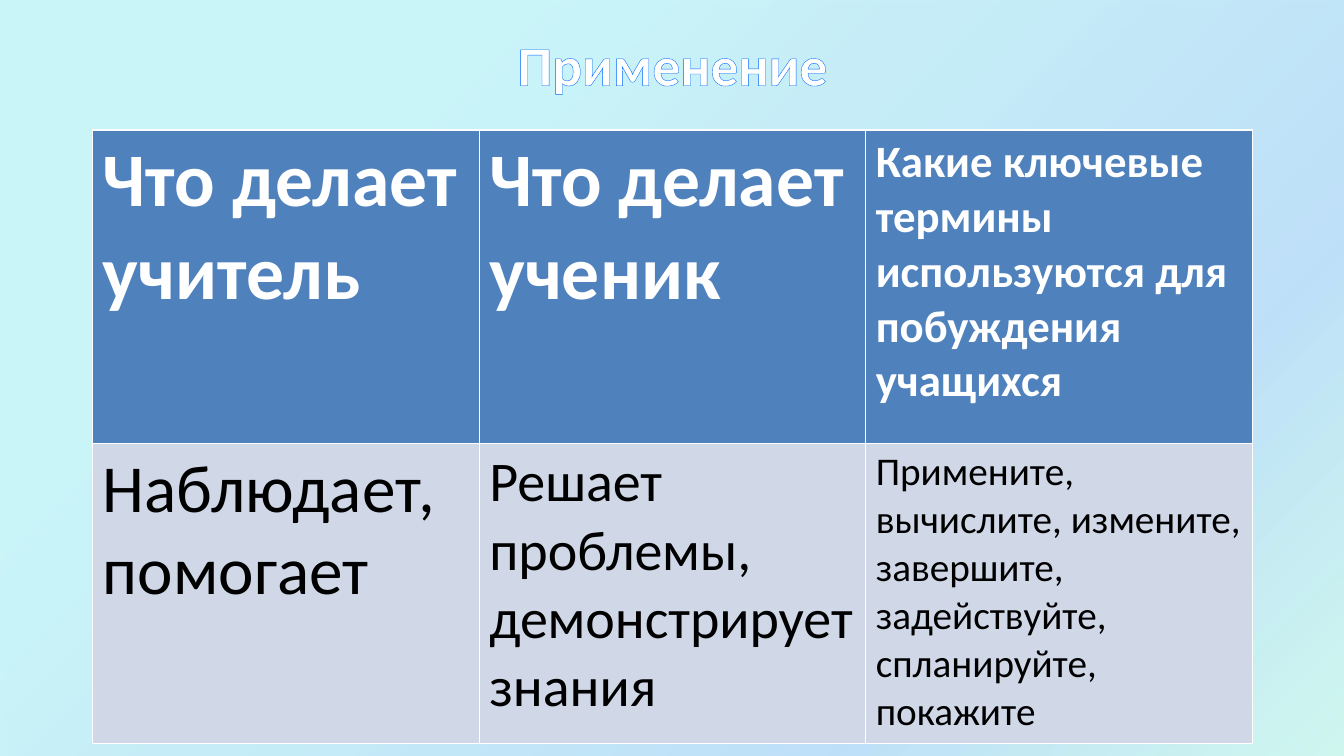
"""Builds the slide «Применение»: a title over a table of teacher, pupil and key terms."""
from dataclasses import dataclass

from lxml import etree
from pptx import Presentation
from pptx.dml.color import RGBColor
from pptx.enum.shapes import MSO_SHAPE
from pptx.enum.text import MSO_ANCHOR, MSO_AUTO_SIZE, PP_ALIGN
from pptx.oxml.ns import qn
from pptx.util import Inches, Pt

RECTANGLE = MSO_SHAPE.RECTANGLE
TOP = MSO_ANCHOR.TOP
CENTER = PP_ALIGN.CENTER
NO_AUTOFIT = MSO_AUTO_SIZE.NONE
TITLE_ONLY = 5

HEADER = ["Что делает учитель", "Что делает ученик",
          "Какие ключевые термины используются для побуждения учащихся"]
BODY = ["Наблюдает, помогает", "Решает проблемы, демонстрирует знания",
        "Примените, вычислите, измените, завершите, задействуйте, спланируйте, покажите"]


@dataclass(frozen=True)
class Theme:
    """Colours, font and type sizes of the slide."""
    font: str = "Calibri"
    white: str = "FFFFFF"
    black: str = "000000"
    header_fill: str = "4F81BD"
    body_fill: str = "D0D8E8"
    title_outline: str = "0066FF"
    title_outline_width: float = 1.45
    title_size: float = 39.6
    header_sizes: tuple = (54, 54, 32)
    body_sizes: tuple = (48, 40, 28)
    gradient: tuple = ((25, "21D6E0", 23), (75, "0087E6", 25),
                       (100, "03D4A8", 18), (100, "005CBF", 26))


class SlideBuilder:
    """Holds the theme and the current slide."""

    def __init__(self, presentation, theme):
        """Add a title-only slide."""
        self.theme = theme
        self.slide = presentation.slides.add_slide(presentation.slide_layouts[TITLE_ONLY])

    def style(self, paragraph, size, color, bold):
        """Set the font of a paragraph."""
        font = paragraph.font
        font.name, font.size, font.bold = self.theme.font, Pt(size), bold
        font.color.rgb = RGBColor.from_string(color)

    def backdrop(self, width, height):
        """Draw the translucent gradient behind everything."""
        shape = self.slide.shapes.add_shape(RECTANGLE, 0, 0, Inches(width), Inches(height))
        shape.shadow.inherit = False
        shape.line.fill.background()
        shape.fill.gradient()
        shape.fill.gradient_angle = 315
        stops = shape._element.spPr.find(".//" + qn("a:gsLst"))
        for stop in list(stops):
            stops.remove(stop)
        for position, color, opacity in self.theme.gradient:
            stop = etree.SubElement(stops, qn("a:gs"), pos=str(position * 1000))
            tint = etree.SubElement(stop, qn("a:srgbClr"), val=color)
            etree.SubElement(tint, qn("a:alpha"), val=str(opacity * 1000))
        self.slide.shapes._spTree.insert(2, shape._element)

    def title(self, text, left, top, width, height):
        """Place the title and outline its letters."""
        title = self.slide.shapes.title
        title.left, title.top = Inches(left), Inches(top)
        title.width, title.height = Inches(width), Inches(height)
        frame = title.text_frame
        frame.auto_size, frame.vertical_anchor, frame.margin_top = NO_AUTOFIT, TOP, 0
        frame.text = text
        paragraph = frame.paragraphs[0]
        paragraph.alignment = CENTER
        self.style(paragraph, self.theme.title_size, self.theme.white, True)
        outline = etree.Element(qn("a:ln"), w=str(Pt(self.theme.title_outline_width)))
        fill = etree.SubElement(outline, qn("a:solidFill"))
        etree.SubElement(fill, qn("a:srgbClr"), val=self.theme.title_outline)
        paragraph.runs[0]._r.get_or_add_rPr().insert(0, outline)

    def table(self, left, top, width, heights):
        """Draw the table with equal columns."""
        theme = self.theme
        rows = [(HEADER, theme.header_sizes, theme.header_fill, theme.white, True),
                (BODY, theme.body_sizes, theme.body_fill, theme.black, False)]
        table = self.slide.shapes.add_table(
            len(rows), len(HEADER), Inches(left), Inches(top),
            Inches(width), Inches(sum(heights))).table
        for row, height in zip(table.rows, heights):
            row.height = Inches(height)
        for row, (texts, sizes, fill, color, bold) in zip(table.rows, rows):
            for cell, text, size in zip(row.cells, texts, sizes):
                cell.text = text
                cell.fill.solid()
                cell.fill.fore_color.rgb = RGBColor.from_string(fill)
                self.style(cell.text_frame.paragraphs[0], size, color, bold)


def main():
    """Build and save the presentation."""
    presentation = Presentation()
    presentation.slide_width, presentation.slide_height = Inches(13.33), Inches(7.5)
    builder = SlideBuilder(presentation, Theme())
    builder.backdrop(13.33, 7.67)
    builder.title("Применение", 0.67, 0.3, 12, 1.25)
    builder.table(0.92, 1.29, 11.5, (3.11, 2.98))
    presentation.save("out.pptx")


if __name__ == "__main__":
    main()
